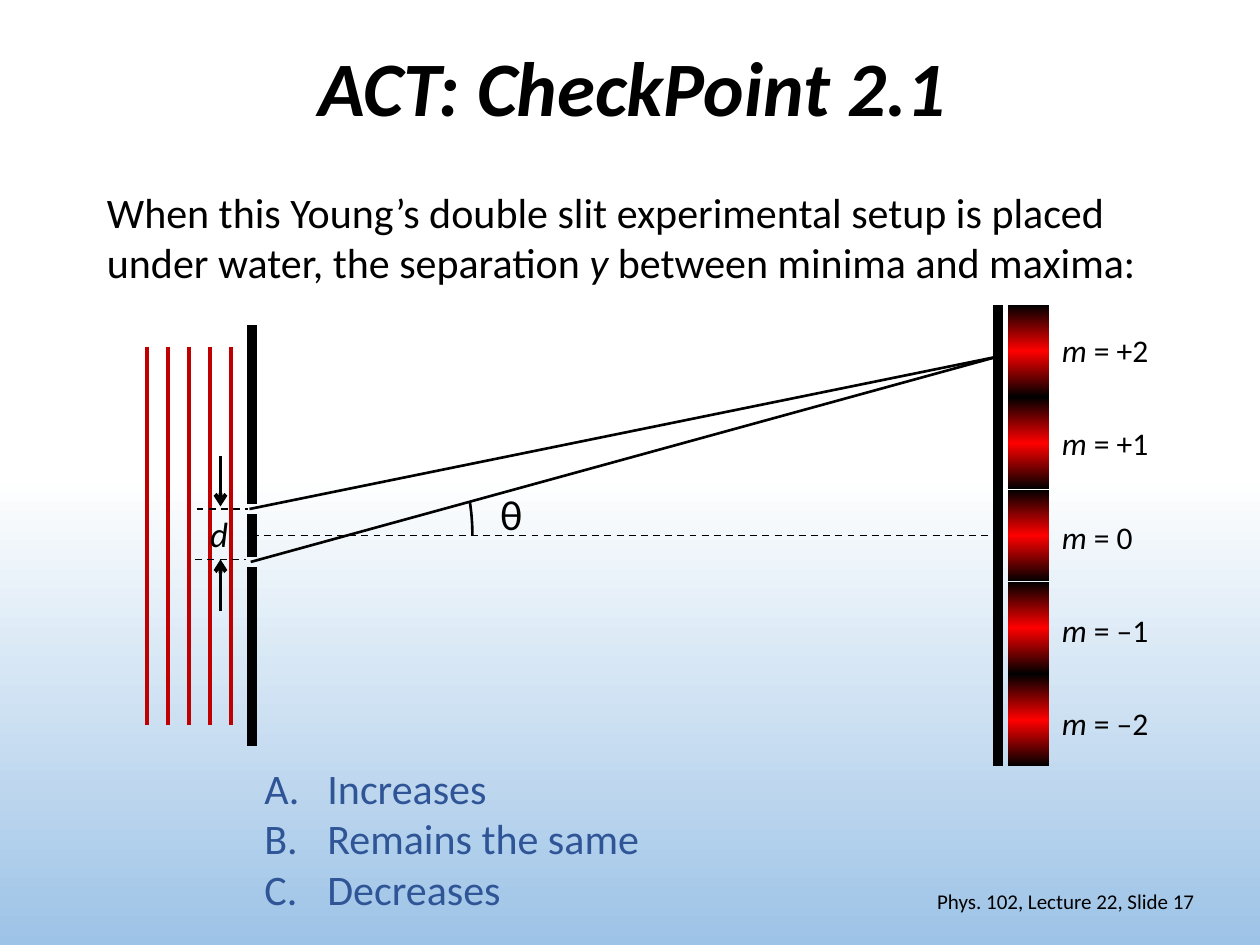
from copy import deepcopy
from pptx import Presentation
from pptx.dml.color import RGBColor
from pptx.enum.dml import MSO_LINE_DASH_STYLE as Dash
from pptx.enum.shapes import MSO_CONNECTOR as Connector, MSO_SHAPE as Shape
from pptx.enum.text import MSO_ANCHOR as Anchor, MSO_AUTO_SIZE as AutoSize, PP_ALIGN as Align
from pptx.oxml.ns import qn
from pptx.util import Inches, Pt
from lxml.etree import SubElement

COLORS = {"ink": "000000", "paper": "FFFFFF", "water": "9DC3E6",
          "wave": "C00000", "bright": "FF0000", "answer": "2F5597"}
RGB = {name: RGBColor.from_string(value) for name, value in COLORS.items()}

deck = Presentation()
deck.slide_width, deck.slide_height = Inches(10), Inches(7.5)
page = deck.slides.add_slide(deck.slide_layouts[5])


def add_line(x1, y1, x2, y2, width, color="ink", dash=False, arrow=False):
    line = page.shapes.add_connector(
        Connector.STRAIGHT, Inches(x1), Inches(y1), Inches(x2), Inches(y2))
    line.line.color.rgb = RGB[color]
    line.line.width = Pt(width)
    if dash:
        line.line.dash_style = Dash.DASH
    if arrow:
        SubElement(line._element.spPr.find(qn("a:ln")), qn("a:tailEnd"), type="arrow")
    SubElement(line._element.spPr, qn("a:effectLst"))


def add_text(place, paragraphs, size, color="ink", wrap=True, box=None):
    """Each paragraph is a list of (text, italic) pairs."""
    box = box or page.shapes.add_textbox(0, 0, 0, 0)
    box.left, box.top, box.width, box.height = map(Inches, place)
    frame = box.text_frame
    frame.word_wrap = wrap
    frame.auto_size = AutoSize.SHAPE_TO_FIT_TEXT
    for number, spans in enumerate(paragraphs):
        para = frame.add_paragraph() if number else frame.paragraphs[0]
        for text, italic in spans:
            span = para.add_run()
            span.text = text
            span.font.color.rgb = RGB[color]
            style = {"name": "Calibri", "size": Pt(size), "italic": italic}
            for name, value in style.items():
                setattr(span.font, name, value)
    return frame


# Background: white fading to blue in the lower half
sky = page.background.fill
sky.gradient()
sky.gradient_angle = 270
for stop, position, name in zip(sky.gradient_stops, (0.5, 1), ("paper", "water")):
    stop.position = position
    stop.color.rgb = RGB[name]

# Title
title = add_text((0.71, 0, 8.62, 1.45), [[("ACT: CheckPoint 2.1", True)]], 44,
                 box=page.shapes.title)
title.auto_size = AutoSize.NONE
title.vertical_anchor = Anchor.MIDDLE
heading = title.paragraphs[0]
heading.alignment, heading.line_spacing = Align.CENTER, 0.9
heading.runs[0].font.bold = True

# Footer
footer = add_text((7.06, 6.95, 2.52, 0.4), [[("Phys. 102, Lecture 22, Slide 17", False)]], 12)
footer.auto_size = AutoSize.NONE
footer.vertical_anchor = Anchor.MIDDLE
footer.paragraphs[0].alignment = Align.RIGHT

# Incoming plane waves
for i in range(5):
    x = 1.17 + i / 6
    add_line(x, 2.75, x, 5.75, 2.25, "wave")

# Barrier with two slits
slit_x, axis_y, screen_x = 2, 4.25, 7.92
for top, bottom in ((2.58, 4), (4.08, 4.42), (4.5, 5.92)):
    add_line(slit_x, top, slit_x, bottom, 6)

# Slit separation d
add_line(1.56, 4.04, 1.97, 4.04, 1, dash=True)
add_line(1.55, 4.44, 1.95, 4.44, 1, dash=True)
add_line(1.75, 3.62, 1.75, 4.02, 2.25, arrow=True)
add_line(1.75, 4.85, 1.75, 4.44, 2.25, arrow=True)
add_text((1.57, 4.02, 0.37, 0.44), [[("d", True)]], 20)

# Interference fringes with their orders
fringe_w, fringe_h = 0.73, 0.33
for i, order in enumerate(("+2", "+1", "0", "–1", "–2")):
    fringe = page.shapes.add_shape(
        Shape.RECTANGLE, Inches(7.8), Inches(2.62 + i * 0.7325),
        Inches(fringe_w), Inches(fringe_h))
    fringe.rotation = 270
    fringe.shadow.inherit = False
    fringe.line.fill.background()
    fringe.fill.gradient()
    fringe.fill.gradient_angle = 0
    stops = fringe._element.spPr.find(".//" + qn("a:gsLst"))
    stops.insert(1, deepcopy(stops[0]))
    for stop, position, name in zip(fringe.fill.gradient_stops, (0, 0.5, 1),
                                    ("ink", "bright", "ink")):
        stop.position = position
        stop.color.rgb = RGB[name]
    add_text((8.33, 2.58 + i * 0.74, 0.9, 0.3),
             [[("m", True), (f" = {order}", False)]], 18, wrap=False)

# Screen, central axis and the two rays
add_line(screen_x, 2.42, screen_x, 6.08, 6)
add_line(slit_x, axis_y, screen_x, axis_y, 1, dash=True)
for x, y in ((1.98, 4.04), (1.99, 4.46)):
    add_line(x, y, screen_x, 2.83, 1.5)

# Angle theta, an arc centred on the slits
radius = 1.75
arc = page.shapes.add_shape(
    Shape.ARC, Inches(slit_x - radius), Inches(axis_y - radius),
    Inches(2 * radius), Inches(2 * radius))
arc.shadow.inherit = False
arc.fill.background()
arc.line.color.rgb = RGB["ink"]
arc.line.width = Pt(1.5)
for i, degrees in enumerate((351.28, 359.94)):
    arc.adjustments[i] = degrees * 0.6  # 60000ths of a degree over 100000
add_text((3.87, 3.83, 0.38, 0.5), [[("θ", False)]], 24, wrap=False)

# Question
add_text((0.75, 1.43, 8.42, 0.91), [[
    ("When this Young’s double slit experimental setup is placed "
     "under water, the separation ", False),
    ("y", True), (" between minima and maxima:", False)]], 24)

# Lettered answers
answers = add_text((2, 6, 3.25, 1.31), [
    [(text, False)] for text in ("Increases", "Remains the same", "Decreases")], 24, "answer")
for para in answers.paragraphs:
    settings = para._p.get_or_add_pPr()
    settings.set("marL", str(Inches(0.5)))
    settings.set("indent", str(-Inches(0.5)))
    SubElement(settings, qn("a:buFont"), typeface="+mj-lt")
    SubElement(settings, qn("a:buAutoNum"), type="alphaUcPeriod")

deck.save("out.pptx")
